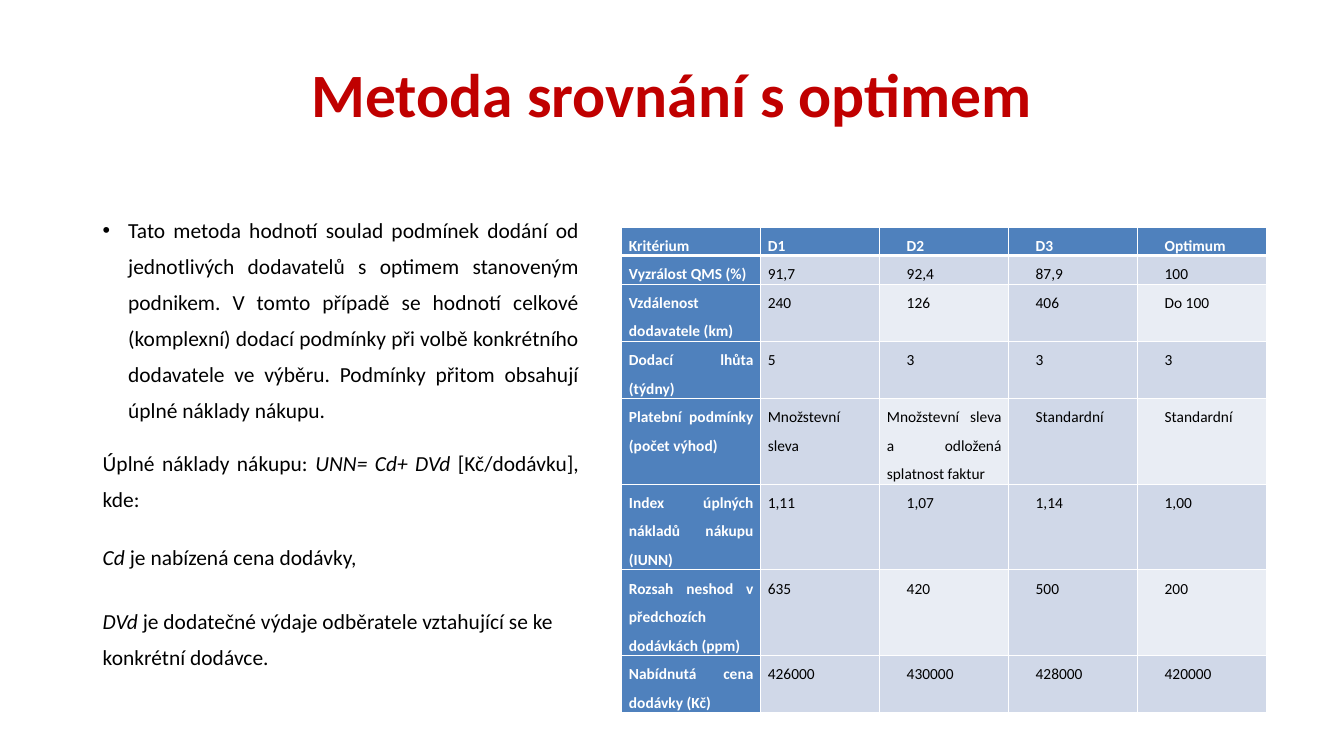
from pptx import Presentation
from pptx.dml.color import RGBColor as RGB
from pptx.enum.text import MSO_ANCHOR as Anchor, PP_ALIGN as Align
from pptx.oxml.ns import qn
from pptx.util import Cm, Pt
from lxml.etree import SubElement as Sub

RED = RGB(0xC0, 0x00, 0x00)
BLACK = RGB(0x00, 0x00, 0x00)
WHITE = RGB(0xFF, 0xFF, 0xFF)
BLUE = RGB(0x4F, 0x81, 0xBD)
BAND = RGB(0xD0, 0xD8, 0xE8)
PALE = RGB(0xE9, 0xED, 0xF4)

TITLE = "Metoda srovnání s optimem"
INTRO = (
    "Tato metoda hodnotí soulad podmínek dodání od jednotlivých dodavatelů "
    "s optimem stanoveným podnikem. V tomto případě se hodnotí celkové "
    "(komplexní) dodací podmínky při volbě konkrétního dodavatele ve výběru. "
    "Podmínky přitom obsahují úplné náklady nákupu."
)
NOTES = [
    (Align.JUSTIFY, 0, 6, [(INTRO, False)]),
    (Align.JUSTIFY, 6, 6, [("Úplné náklady nákupu: ", False),
                           ("UNN= Cd+ DVd ", True),
                           ("[Kč/dodávku], kde:", False)]),
    (Align.LEFT, 10, 10, [("Cd ", True), ("je nabízená cena dodávky,", False)]),
    (Align.LEFT, 10, 10, [("DVd ", True),
                          ("je dodatečné výdaje odběratele vztahující se ke "
                           "konkrétní dodávce.", False)]),
]
ROWS = [
    (1, "Kritérium", "D1", "D2", "D3", "Optimum"),
    (1, "Vyzrálost QMS (%)", "91,7", "92,4", "87,9", "100"),
    (2, "Vzdálenost dodavatele (km)", "240", "126", "406", "Do 100"),
    (2, "Dodací lhůta (týdny)", "5", "3", "3", "3"),
    (3, "Platební podmínky (počet výhod)", "Množstevní sleva",
     "Množstevní sleva a odložená splatnost faktur", "Standardní", "Standardní"),
    (3, "Index úplných nákladů nákupu (IUNN)", "1,11", "1,07", "1,14", "1,00"),
    (3, "Rozsah neshod v předchozích dodávkách (ppm)",
     "635", "420", "500", "200"),
    (2, "Nabídnutá cena dodávky (Kč)", "426000", "430000", "428000", "420000"),
]
COLS = [3.5, 3, 3.25, 3.25, 3.25]
LINE = 0.72


def style(para, size, color, bold=False):
    """Set the font of a whole paragraph."""
    font = para.font
    font.name, font.size, font.bold = "Calibri", Pt(size), bold
    font.color.rgb = color


def indent(para, left, first=0):
    """Set the left margin and first line offset of a paragraph."""
    props = para._p.get_or_add_pPr()
    props.set("marL", str(Cm(left)))
    props.set("indent", str(Cm(first)))
    return props


def edge(cell, head):
    """Draw white borders, with a thick lower one in the header."""
    props = cell._tc.get_or_add_tcPr()
    for pos, side in enumerate(("lnL", "lnR", "lnT", "lnB")):
        wide = Pt(3 if head and side == "lnB" else 1)
        line = props.makeelement(qn(f"a:{side}"), {"w": str(wide)})
        fill = Sub(line, qn("a:solidFill"))
        Sub(fill, qn("a:srgbClr"), val=str(WHITE))
        props.insert(pos, line)


def frame(slide, box):
    """Add a wrapping text box and return its text frame."""
    text = slide.shapes.add_textbox(*map(Cm, box)).text_frame
    text.word_wrap = True
    return text


def title(slide, box):
    """Place the centred title."""
    text = frame(slide, box)
    text.vertical_anchor = Anchor.MIDDLE
    para = text.paragraphs[0]
    para.text, para.alignment = TITLE, Align.CENTER
    style(para, 44, RED, True)


def notes(slide, box):
    """Place the method text with its first paragraph bulleted."""
    text = frame(slide, box)
    for num, (align, above, below, parts) in enumerate(NOTES):
        para = text.add_paragraph() if num else text.paragraphs[0]
        para.alignment, para.line_spacing = align, 1.4
        para.space_before, para.space_after = Pt(above), Pt(below)
        if not num:
            props = indent(para, 0.64, -0.64)
            Sub(props, qn("a:buFont"), typeface="Arial")
            Sub(props, qn("a:buChar"), char="•")
        style(para, 15.3, BLACK)
        for words, slant in parts:
            run = para.add_run()
            run.text = words
            if slant:
                run.font.italic = True


def fill_cell(cell, row, col, words):
    """Write and colour one table cell."""
    dark = row == 0 or col == 0
    cell.margin_left = cell.margin_right = Cm(0.18)
    cell.margin_top = cell.margin_bottom = 0
    cell.fill.solid()
    pale = row % 2 == 0 and col % 2 == 0
    cell.fill.fore_color.rgb = BLUE if dark else PALE if pale else BAND
    edge(cell, row == 0)
    para = cell.text_frame.paragraphs[0]
    para.text, para.alignment = words, Align.JUSTIFY
    para.line_spacing, para.space_after = 1.5, Pt(10)
    if col > 1 and len(words) < 20:
        indent(para, 0.5)
    style(para, 11, WHITE if dark else BLACK, dark)


def grid(slide, box):
    """Place the supplier table at the left and top of its box."""
    table = slide.shapes.add_table(len(ROWS), len(COLS), *map(Cm, box)).table
    for col, wide in zip(table.columns, COLS):
        col.width = Cm(wide)
    for num, (lines, *cells) in enumerate(ROWS):
        table.rows[num].height = Cm(lines * LINE)
        for col, words in enumerate(cells):
            fill_cell(table.cell(num, col), num, col, words)


def main():
    """Build and save the slide."""
    deck = Presentation()
    deck.slide_width, deck.slide_height = Cm(33.87), Cm(19.05)
    slide = deck.slides.add_slide(deck.slide_layouts[6])
    title(slide, (1.7, 0.76, 30.48, 3.18))
    grid(slide, (15.67, 5.72, sum(COLS), LINE * sum(row[0] for row in ROWS)))
    notes(slide, (2.34, 5.08, 12.5, 12.09))
    deck.save("out.pptx")


if __name__ == "__main__":
    main()
